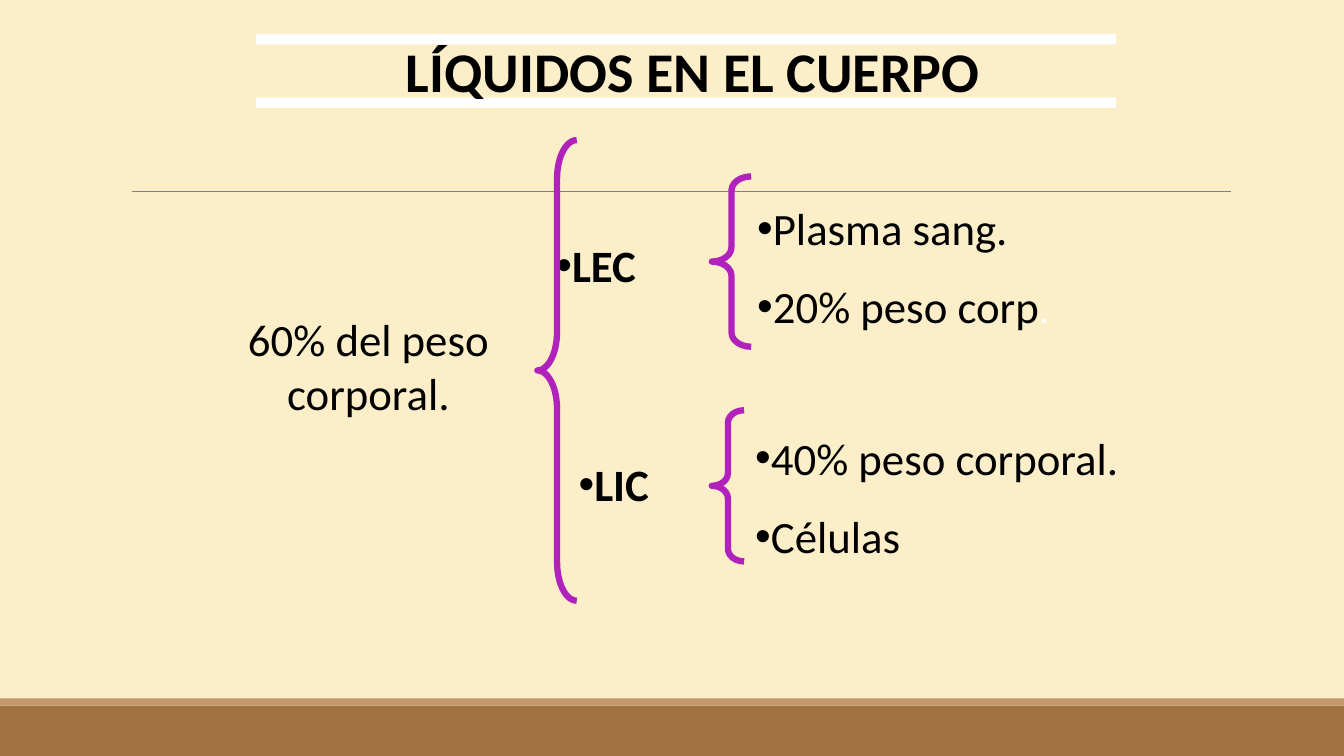
from lxml.etree import SubElement
from pptx import Presentation
from pptx.dml.color import RGBColor
from pptx.enum.shapes import MSO_CONNECTOR, MSO_SHAPE as Preset
from pptx.enum.text import MSO_ANCHOR as Anchor, MSO_AUTO_SIZE, PP_ALIGN as Align
from pptx.oxml.ns import qn
from pptx.util import Inches, Pt

COLORS = {"background": "FBEEC9", "footer": "A27242", "footer edge": "C3986D",
          "rule": "808080", "bar": "FFFFFF", "brace": "B122BC",
          "text": "000000", "faint": "FFFFFF"}


def color(name):
    return RGBColor.from_string(COLORS[name])


def set_format(target, values):
    for name, value in values.items():
        setattr(target, name, value)


class SlideBuilder:
    font_name = "Calibri"
    text_size = 32

    def __init__(self, slide):
        self.slide = slide
        slide.background.fill.solid()
        slide.background.fill.fore_color.rgb = color("background")

    def shape(self, preset, box):
        shape = self.slide.shapes.add_shape(preset, *map(Inches, box))
        shape.shadow.inherit = False
        shape.fill.background()
        shape.line.fill.background()
        return shape

    def bar(self, box, fill):
        shape = self.shape(Preset.RECTANGLE, box)
        shape.fill.solid()
        shape.fill.fore_color.rgb = color(fill)

    def rule(self, left, right, top):
        line = self.slide.shapes.add_connector(
            MSO_CONNECTOR.STRAIGHT, *map(Inches, (left, top, right, top)))
        line.line.color.rgb = color("rule")
        line.line.width = Pt(0.5)
        SubElement(line.element.spPr, qn("a:effectLst"))

    def brace(self, box, curve):
        shape = self.shape(Preset.LEFT_BRACE, box)
        shape.adjustments[0] = curve
        shape.line.color.rgb = color("brace")
        shape.line.width = Pt(4.5)

    def run(self, paragraph, text, ink="text", size=text_size, bold=False):
        run = paragraph.add_run()
        run.text = text
        set_format(run.font, {"name": self.font_name, "size": Pt(size), "bold": bold})
        run.font.color.rgb = color(ink)

    def fill_text(self, shape, lines, anchor=Anchor.MIDDLE, align=Align.CENTER,
                  bullet=False, gap=0, **style):
        """Fill a shape; each line is a list of (text, run style) pairs."""
        frame = shape.text_frame
        set_format(frame, {
            "word_wrap": True, "auto_size": MSO_AUTO_SIZE.NONE, "vertical_anchor": anchor,
            "margin_left": Inches(0.1), "margin_right": Inches(0.1),
            "margin_top": Inches(0.05), "margin_bottom": Inches(0.05)})
        for index, line in enumerate(lines):
            paragraph = frame.add_paragraph() if index else frame.paragraphs[0]
            set_format(paragraph, {"alignment": align,
                                   "space_before": Pt(gap if index else 0)})
            if bullet:
                properties = paragraph._p.get_or_add_pPr()
                properties.set("marL", "0")
                properties.set("indent", "0")
                SubElement(properties, qn("a:buFont"), typeface="Arial")
                SubElement(properties, qn("a:buChar"), char="•")
            for text, run_style in line:
                self.run(paragraph, text, **{**style, **run_style})

    def label(self, box, lines, **style):
        shape = self.shape(Preset.ACTION_BUTTON_CUSTOM, box)
        self.fill_text(shape, [[(line, {})] for line in lines], **style)

    def placeholder(self, index, box, lines, **style):
        """Place, fill and bring to the front one of the layout's placeholders."""
        shape = self.slide.placeholders[index]
        set_format(shape, dict(zip(("left", "top", "width", "height"), map(Inches, box))))
        self.fill_text(shape, lines, **style)
        shape.element.getparent().append(shape.element)


def main():
    presentation = Presentation()
    set_format(presentation, {"slide_width": Inches(13.33), "slide_height": Inches(7.5)})
    two_content = presentation.slide_layouts[3]
    builder = SlideBuilder(presentation.slides.add_slide(two_content))

    builder.bar((0, 7, 13.33, 0.5), "footer")
    builder.bar((0, 6.93, 13.33, 0.07), "footer edge")
    builder.rule(1.31, 12.21, 1.9)

    for top in (0.34, 0.97):
        builder.bar((2.54, top, 8.53, 0.1), "bar")
    builder.placeholder(0, (2.34, 0.32, 9.06, 0.75),
                        [[("LÍQUIDOS EN EL CUERPO", {})]], size=40, bold=True)

    builder.label((2.3, 3.04, 2.71, 1.18), ["60% del peso", "corporal."])
    for name, left, top in (("LEC", 5.42, 2.11), ("LIC", 5.64, 4.28)):
        builder.label((left, top, 2.78, 1.04), [name],
                      align=Align.LEFT, bullet=True, bold=True)

    builder.brace((7.06, 1.75, 0.39, 1.69), 0.36)
    builder.brace((7.06, 4.07, 0.32, 1.5), 0.39)

    extracellular = [[("Plasma sang.", {})],
                     [("20% peso corp", {}), (".", {"size": 28, "ink": "faint"})]]
    intracellular = [[("40% peso corporal.", {})], [("Células", {})]]
    for index, box, lines in ((1, (7.41, 1.94, 3.98, 1.43), extracellular),
                              (2, (7.39, 4.22, 4.08, 1.43), intracellular)):
        builder.placeholder(index, box, lines, anchor=Anchor.TOP,
                            align=Align.LEFT, bullet=True, gap=17.5)

    builder.brace((5.33, 1.39, 0.39, 4.57), 0.98)
    presentation.save("out.pptx")


if __name__ == "__main__":
    main()
